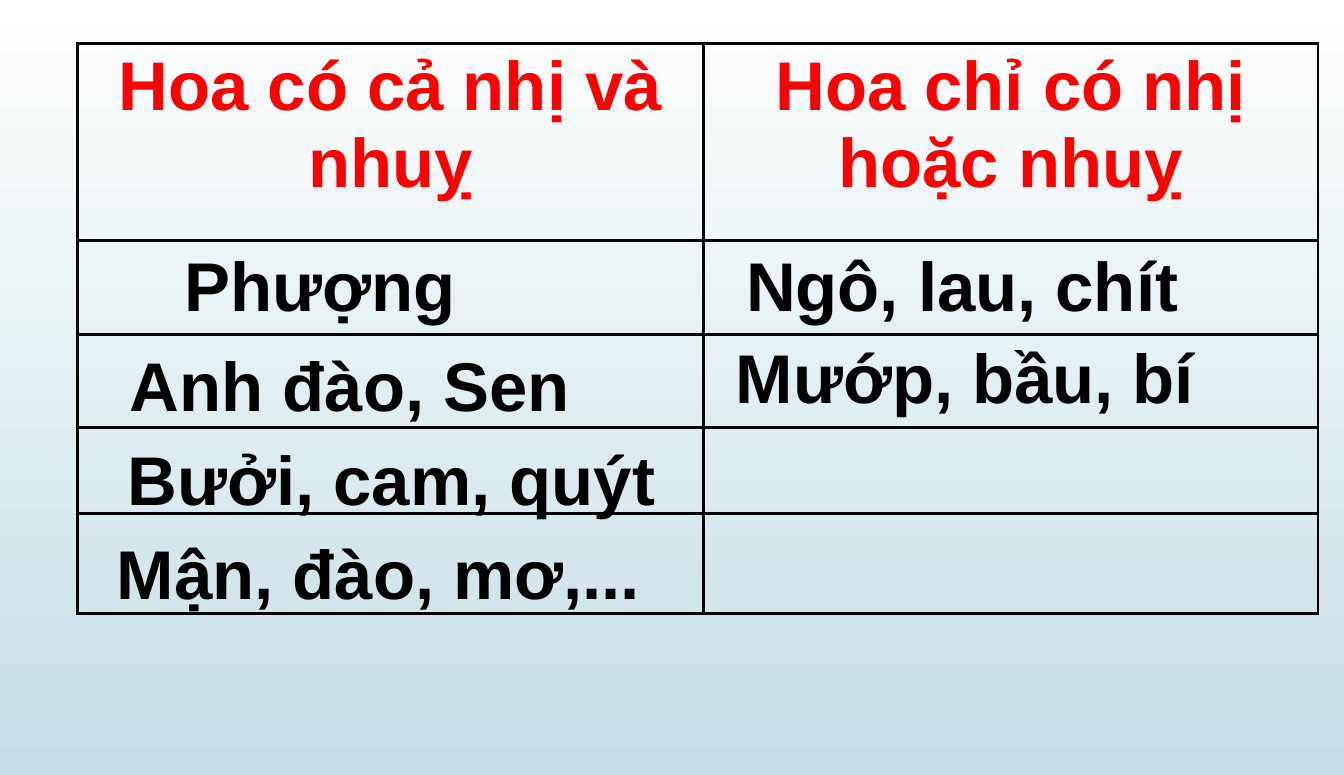
from pptx import Presentation
from pptx.dml.color import RGBColor
from pptx.enum.text import MSO_AUTO_SIZE, PP_ALIGN
from pptx.oxml import parse_xml
from pptx.oxml.ns import nsdecls
from pptx.util import Cm, Pt

CENTER, LEFT = PP_ALIGN.CENTER, PP_ALIGN.LEFT
GROW = MSO_AUTO_SIZE.SHAPE_TO_FIT_TEXT
RED = RGBColor(0xFF, 0x00, 0x00)
BLACK = RGBColor(0x00, 0x00, 0x00)
WHITE = RGBColor(0xFF, 0xFF, 0xFF)
PALE_BLUE = RGBColor(0xC5, 0xDE, 0xE5)
BORDER_SIDES = ("lnL", "lnR", "lnT", "lnB")


class FlowerSlide:
    font_name = "Arial"
    font_size = Pt(48)
    border_width = Pt(2.25)
    label_height = 2.31

    def __init__(self, slide):
        self.slide = slide

    def background(self, top, bottom):
        fill = self.slide.background.fill
        fill.gradient()
        fill.gradient_angle = 270
        for stop, color, position in zip(fill.gradient_stops, (top, bottom), (0, 1)):
            stop.color.rgb = color
            stop.position = position

    def set_text(self, frame, text, color, alignment):
        paragraph = frame.paragraphs[0]
        paragraph.text = text
        paragraph.alignment = alignment
        font = paragraph.font
        font.name = self.font_name
        font.size = self.font_size
        font.bold = True
        font.color.rgb = color

    def border(self, cell):
        properties = cell._tc.get_or_add_tcPr()
        for index, side in enumerate(BORDER_SIDES):
            properties.insert(index, parse_xml(
                f'<a:{side} {nsdecls("a")} w="{self.border_width}"><a:solidFill>'
                f'<a:srgbClr val="{BLACK}"/></a:solidFill></a:{side}>'))

    def table(self, left, top, widths, heights, headings):
        grid = self.slide.shapes.add_table(
            len(heights), len(widths), Cm(left), Cm(top),
            Cm(sum(widths)), Cm(sum(heights))).table
        for column, width in zip(grid.columns, widths):
            column.width = Cm(width)
        for row, height in zip(grid.rows, heights):
            row.height = Cm(height)
        for cell in grid.iter_cells():
            cell.fill.background()
            self.border(cell)
        for column, heading in enumerate(headings):
            self.set_text(grid.cell(0, column).text_frame, heading, RED, CENTER)

    def label(self, text, left, top, width, alignment):
        box = self.slide.shapes.add_textbox(
            Cm(left), Cm(top), Cm(width), Cm(self.label_height))
        frame = box.text_frame
        frame.word_wrap = False
        frame.auto_size = GROW
        self.set_text(frame, text, BLACK, alignment)


def main():
    presentation = Presentation()
    presentation.slide_width = Cm(33.02)
    presentation.slide_height = Cm(19.05)
    page = FlowerSlide(presentation.slides.add_slide(presentation.slide_layouts[6]))
    page.background(WHITE, PALE_BLUE)
    page.table(1.9, 1.06, (15.39, 15.09), (4.85, 2.31, 2.29, 2.11, 2.46),
               ("Hoa có cả nhị và nhuỵ", "Hoa chỉ có nhị hoặc nhuỵ"))

    flowers = (
        ("Phượng", 4.24, 5.84, 7.24, CENTER),
        ("Anh đào, Sen", 2.87, 8.31, 11.46, CENTER),
        ("Bưởi, cam, quýt", 2.82, 10.62, 13.61, CENTER),
        ("Mận, đào, mơ,...", 2.54, 12.93, 13.54, CENTER),
        ("Ngô, lau, chít", 18.08, 5.84, 11.28, LEFT),
        ("Mướp, bầu, bí", 17.83, 8.1, 11.91, LEFT),
    )
    for flower in flowers:
        page.label(*flower)
    presentation.save("out.pptx")


if __name__ == "__main__":
    main()
